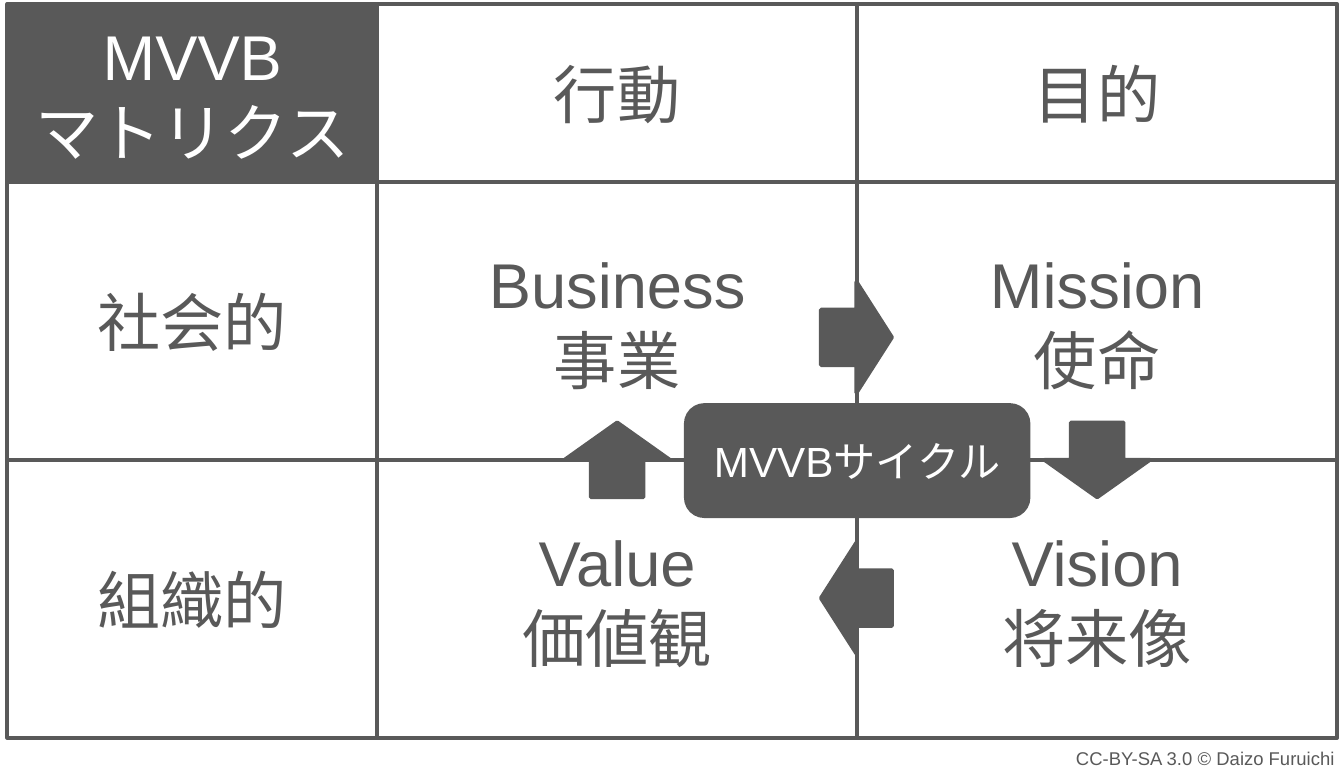
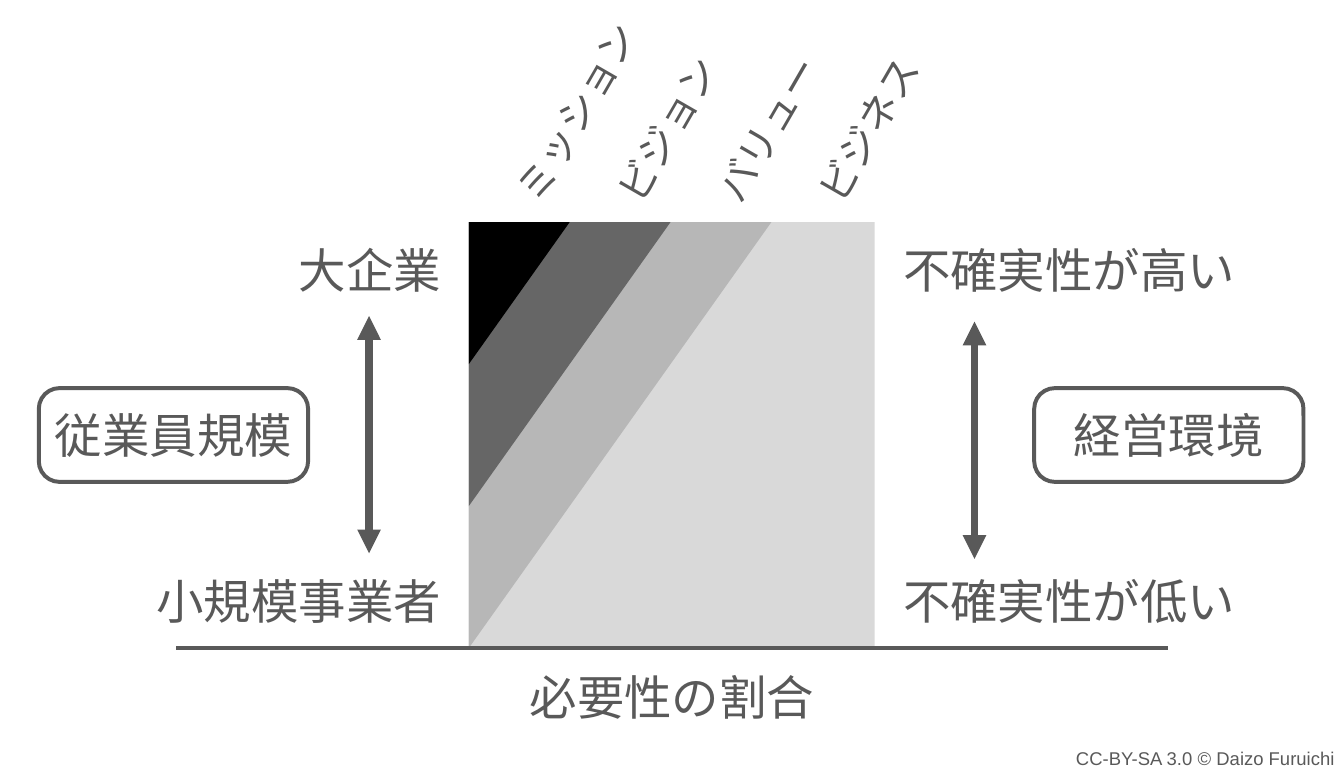
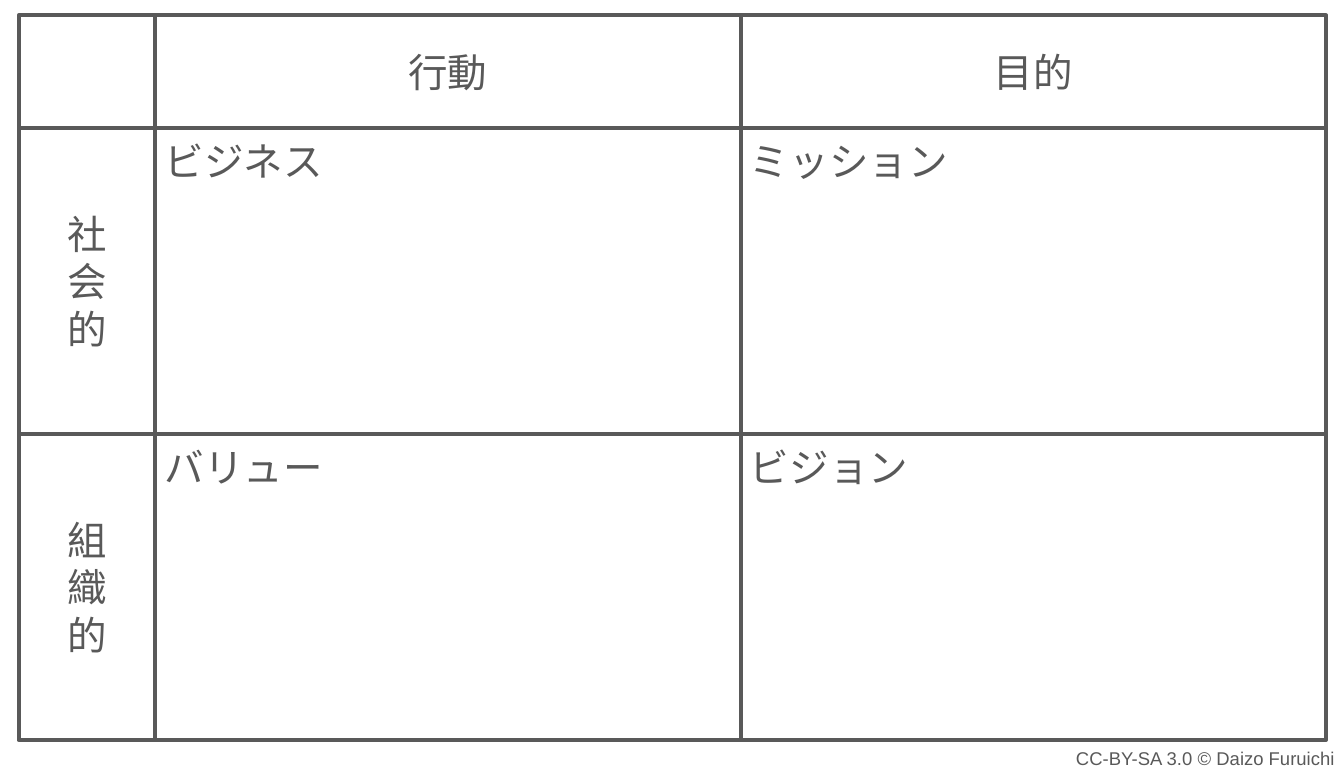
from dataclasses import dataclass
from itertools import accumulate

from lxml.etree import SubElement
from pptx import Presentation
from pptx.dml.color import RGBColor
from pptx.enum.shapes import MSO_CONNECTOR, MSO_SHAPE
from pptx.enum.text import MSO_ANCHOR, PP_ALIGN
from pptx.oxml.ns import qn
from pptx.shapes.autoshape import Shape
from pptx.slide import Slide
from pptx.util import Cm, Pt

# Shared style
GRAY, WHITE = "595959", "FFFFFF"
FONT = "Arial"
INSET = 0.25
OUTLINE = 3

# Page of 1360 by 780 pixels at 96 to the inch, in centimetres
SLIDE_WIDTH, SLIDE_HEIGHT = 1360 * 2.54 / 96, 780 * 2.54 / 96


@dataclass(frozen=True)
class Box:
    """Position and size in centimetres."""
    left: float
    top: float
    width: float
    height: float


@dataclass(frozen=True)
class Style:
    size: float
    color: str = GRAY
    align: PP_ALIGN = PP_ALIGN.CENTER
    anchor: MSO_ANCHOR = MSO_ANCHOR.MIDDLE


@dataclass(frozen=True)
class Cell:
    text: str
    style: Style
    fill: str = WHITE


@dataclass(frozen=True)
class Grid:
    left: float
    top: float
    widths: tuple[float, ...]
    heights: tuple[float, ...]

    def column_edges(self) -> list[float]:
        return list(accumulate(self.widths, initial=self.left))

    def row_edges(self) -> list[float]:
        return list(accumulate(self.heights, initial=self.top))


@dataclass(frozen=True)
class Scale:
    left: float
    align: PP_ALIGN
    high: str
    low: str
    arrow_x: float
    arrow_top: float
    name_left: float
    name: str


def rgb(color: str) -> RGBColor:
    return RGBColor.from_string(color)


def centered(x: float, y: float, width: float, height: float) -> Box:
    return Box(x - width / 2, y - height / 2, width, height)


def lengths(box: Box) -> tuple[Cm, Cm, Cm, Cm]:
    return Cm(box.left), Cm(box.top), Cm(box.width), Cm(box.height)


def write(shape: Shape, text: str, style: Style) -> None:
    frame = shape.text_frame
    frame.text = text
    frame.word_wrap = True
    frame.vertical_anchor = style.anchor
    frame.margin_left = frame.margin_right = Cm(INSET)
    frame.margin_top = frame.margin_bottom = Cm(INSET)
    for paragraph in frame.paragraphs:
        paragraph.alignment = style.align
        for run in paragraph.runs:
            run.font.size = Pt(style.size)
            run.font.name = FONT
            run.font.color.rgb = rgb(style.color)
            east_asian = SubElement(run.font._element, qn("a:ea"))
            east_asian.set("typeface", FONT)


def add_box(slide: Slide, kind: MSO_SHAPE, box: Box, fill: str,
            outlined: bool = True, rotation: float = 0) -> Shape:
    shape = slide.shapes.add_shape(kind, *lengths(box))
    shape.shadow.inherit = False
    shape.rotation = rotation
    shape.fill.solid()
    shape.fill.fore_color.rgb = rgb(fill)
    if outlined:
        shape.line.color.rgb = rgb(GRAY)
        shape.line.width = Pt(OUTLINE)
        SubElement(shape.line._get_or_add_ln(), qn("a:round"))
    else:
        shape.line.fill.background()
    return shape


def add_label(slide: Slide, box: Box, text: str, style: Style,
              rotation: float = 0) -> None:
    label = slide.shapes.add_textbox(*lengths(box))
    label.rotation = rotation
    write(label, text, style)


def add_line(slide: Slide, x1: float, y1: float, x2: float, y2: float,
             width: float, arrows: bool = False) -> None:
    line = slide.shapes.add_connector(
        MSO_CONNECTOR.STRAIGHT, Cm(x1), Cm(y1), Cm(x2), Cm(y2))
    line.line.color.rgb = rgb(GRAY)
    line.line.width = Pt(width)
    if arrows:
        for end in ("a:headEnd", "a:tailEnd"):
            SubElement(line.line._get_or_add_ln(), qn(end)).set("type", "triangle")
    SubElement(line._element.spPr, qn("a:effectLst"))


def add_grid(slide: Slide, grid: Grid, rows: list[list[Cell]]) -> None:
    for top, height, cells in zip(grid.row_edges(), grid.heights, rows):
        for left, width, cell in zip(grid.column_edges(), grid.widths, cells):
            shape = add_box(slide, MSO_SHAPE.FLOWCHART_PROCESS,
                            Box(left, top, width, height), cell.fill)
            if cell.text:
                write(shape, cell.text, cell.style)


def new_slide(presentation: Presentation) -> Slide:
    """Blank slide with the licence footer."""
    slide = presentation.slides.add_slide(presentation.slide_layouts[6])
    height = 0.69
    footer = add_box(slide, MSO_SHAPE.RECTANGLE,
                     Box(SLIDE_WIDTH / 2, SLIDE_HEIGHT - height,
                         SLIDE_WIDTH / 2, height),
                     WHITE, outlined=False)
    write(footer, "CC-BY-SA 3.0 ©️ Daizo Furuichi", Style(14, align=PP_ALIGN.RIGHT))
    return slide


def build_matrix(slide: Slide) -> None:
    grid = Grid(0.2, 0.11, (9.9, 12.85, 12.85), (4.76, 7.44, 7.44))
    style = Style(48)
    texts = [
        ["行動", "目的"],
        ["社会的", "Business\n事業", "Mission\n使命"],
        ["組織的", "Value\n価値観", "Vision\n将来像"],
    ]
    rows = [[Cell(text, style) for text in row] for row in texts]
    rows[0].insert(0, Cell("MVVB\nマトリクス", Style(48, WHITE), GRAY))
    add_grid(slide, grid, rows)

    # Cycle arrows across the inner grid lines
    middle_x, middle_y = grid.column_edges()[2], grid.row_edges()[2]
    column_offset = grid.widths[1] / 2
    across, along = (1.9, 2.97), (2.0, 2.82)
    arrows = [
        (middle_x - 0.02, middle_y - 3.28, across, 0),
        (middle_x + column_offset, middle_y, along, 90),
        (middle_x - 0.02, middle_y + 3.7, across, 180),
        (middle_x - column_offset, middle_y, along, 270),
    ]
    for x, y, size, rotation in arrows:
        add_box(slide, MSO_SHAPE.RIGHT_ARROW, centered(x, y, *size), GRAY,
                rotation=rotation)

    # Cycle name
    cycle = add_box(slide, MSO_SHAPE.FLOWCHART_ALTERNATE_PROCESS,
                    centered(middle_x, middle_y + 0.02, 9.17, 2.97), GRAY)
    write(cycle, "MVVBサイクル", Style(32, WHITE))


def build_proportions(slide: Slide) -> None:
    # Square with three nested triangles, largest first
    square = Box(12.55, 5.95, 10.87, 11.4)
    bottom = square.top + square.height
    step_x, step_y = 2.7, square.height / 3
    add_box(slide, MSO_SHAPE.RECTANGLE, square, "D9D9D9", outlined=False)
    for steps, color in ((3, "B7B7B7"), (2, "666666"), (1, "000000")):
        width, height = step_x * steps, step_y * steps
        # A quarter turn swaps the two sides
        box = centered(square.left + width / 2, square.top + height / 2,
                       height, width)
        add_box(slide, MSO_SHAPE.RIGHT_TRIANGLE, box, color,
                outlined=False, rotation=90)

    # Base line and slanted band names
    add_line(slide, 4.72, bottom, 31.27, bottom, OUTLINE)
    for index, name in enumerate(("ミッション", "ビジョン", "バリュー", "ビジネス")):
        add_label(slide, Box(12.32 + 2.69 * index, 1.27, 6.68, 2.67), name,
                  Style(30, align=PP_ALIGN.LEFT), rotation=300)

    # Scales on both sides
    height = 2.51
    add_label(slide, Box(5.89, 17.4, 24.2, height), "必要性の割合", Style(36))
    scales = [
        Scale(0, PP_ALIGN.RIGHT, "大企業", "小規模事業者",
              9.88, 8.46, 1.04, "従業員規模"),
        Scale(23.93, PP_ALIGN.LEFT, "不確実性が高い", "不確実性が低い",
              26.09, 8.61, 27.69, "経営環境"),
    ]
    for scale in scales:
        for top, text in ((square.top, scale.high), (14.81, scale.low)):
            add_label(slide, Box(scale.left, top, 12.06, height), text,
                      Style(36, align=scale.align))
        add_line(slide, scale.arrow_x, scale.arrow_top,
                 scale.arrow_x, scale.arrow_top + 6.35, 6, arrows=True)
        badge = add_box(slide, MSO_SHAPE.ROUNDED_RECTANGLE,
                        Box(scale.name_left, 10.39, 7.21, height), WHITE)
        badge.adjustments[0] = 0.22
        write(badge, scale.name, Style(36))


def build_worksheet(slide: Slide) -> None:
    grid = Grid(0.5, 0.41, (3.66, 15.67, 15.67), (3.02, 8.19, 8.19))
    heading = Style(30)
    entry = Style(30, align=PP_ALIGN.LEFT, anchor=MSO_ANCHOR.TOP)
    rows = [[Cell(text, heading) for text in ("", "行動", "目的")]]
    for side, *names in (("社会的", "ビジネス", "ミッション"),
                         ("組織的", "バリュー", "ビジョン")):
        rows.append([Cell("\n".join(side), heading),
                     *(Cell(name, entry) for name in names)])
    add_grid(slide, grid, rows)


def main() -> None:
    presentation = Presentation()
    presentation.slide_width = Cm(SLIDE_WIDTH)
    presentation.slide_height = Cm(SLIDE_HEIGHT)
    for build in (build_matrix, build_proportions, build_worksheet):
        build(new_slide(presentation))
    presentation.save("out.pptx")


if __name__ == "__main__":
    main()
